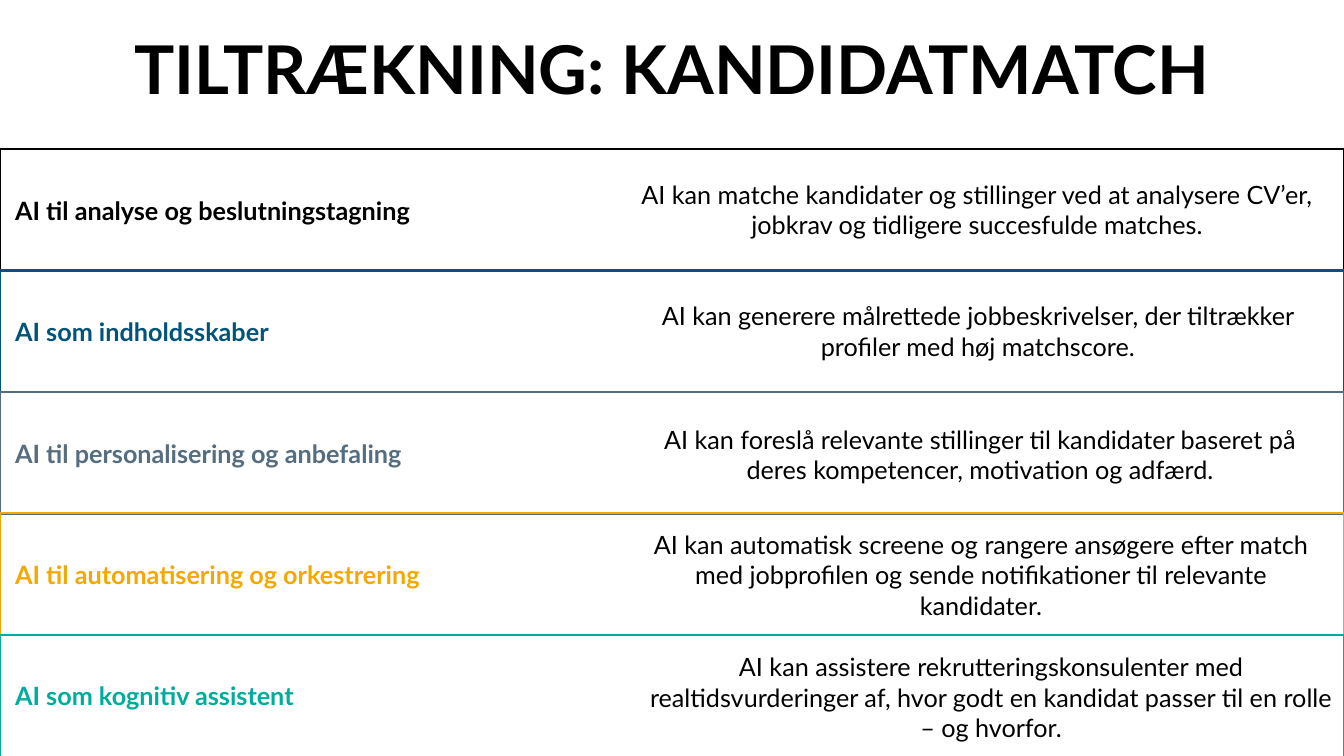
from pptx import Presentation
from pptx.dml.color import RGBColor
from pptx.enum.shapes import MSO_SHAPE as Shape
from pptx.enum.text import MSO_ANCHOR as Anchor, PP_ALIGN as Align
from pptx.util import Inches, Pt

FONT = "Lato"
COLORS = {
    "black": "000000",
    "blue": "00547A",
    "slate": "556D7E",
    "amber": "F6A800",
    "teal": "00AC9C",
}
WIDTH, HEIGHT = 13.33, 7.5
TITLE_HEIGHT = 1.34
ROWS_TOP = 1.48
ROW_PITCH = (HEIGHT - ROWS_TOP) / 5
ROW_HEIGHT = 1.21
DETAIL_WIDTH, DETAIL_HEIGHT = 7, 1.2

# Colour, label, detail, and the detail's left and top within its row
ROWS = [
    ("black", "AI til analyse og beslutningstagning",
     "AI kan matche kandidater og stillinger ved at analysere CV’er, "
     "jobkrav og tidligere succesfulde matches.", 6.19, 0),
    ("blue", "AI som indholdsskaber",
     "AI kan generere målrettede jobbeskrivelser, der tiltrækker "
     "profiler med høj matchscore.", 6.2, 0),
    ("slate", "AI til personalisering og anbefaling",
     "AI kan foreslå relevante stillinger til kandidater baseret på "
     "deres kompetencer, motivation og adfærd.", 6.22, 0.02),
    ("amber", "AI til automatisering og orkestrering",
     "AI kan automatisk screene og rangere ansøgere efter match med "
     "jobprofilen og sende notifikationer til relevante kandidater.", 6.23, 0.01),
    ("teal", "AI som kognitiv assistent",
     "AI kan assistere rekrutteringskonsulenter med realtidsvurderinger af, "
     "hvor godt en kandidat passer til en rolle – og hvorfor.", 6.33, 0.02),
]


def write(shape, text, size, color="black", bold=False, align=Align.CENTER):
    frame = shape.text_frame
    frame.word_wrap = True
    frame.vertical_anchor = Anchor.MIDDLE
    para = frame.paragraphs[0]
    para.alignment = align
    span = para.add_run()
    span.text = text
    span.font.name = FONT
    span.font.size = Pt(size)
    span.font.bold = bold
    span.font.color.rgb = RGBColor.from_string(COLORS[color])


def add_title(page, left, top, width, height):
    box = page.shapes.add_textbox(*map(Inches, (left, top, width, height)))
    write(box, "TILTRÆKNING: KANDIDATMATCH", 48, bold=True)


def add_band(page, left, top, width, height, color, label):
    """Outlined row with its coloured label at the left."""
    band = page.shapes.add_shape(
        Shape.RECTANGLE, *map(Inches, (left, top, width, height)))
    band.shadow.inherit = False
    band.fill.background()
    band.line.color.rgb = RGBColor.from_string(COLORS[color])
    band.line.width = Pt(1.5)
    write(band, " " + label, 18, color, bold=True, align=Align.LEFT)


def add_detail(page, left, top, width, height, text):
    box = page.shapes.add_textbox(*map(Inches, (left, top, width, height)))
    write(box, text, 18)


def add_rows(page, left, top, width):
    for index, (color, label, *_) in enumerate(ROWS):
        add_band(page, left, top + index * ROW_PITCH, width, ROW_HEIGHT, color, label)
    for index, (_, _, detail, shift, drop) in enumerate(ROWS):
        add_detail(page, left + shift, top + index * ROW_PITCH + drop,
                   DETAIL_WIDTH, DETAIL_HEIGHT, detail)


def main():
    deck = Presentation()
    deck.slide_width, deck.slide_height = Inches(WIDTH), Inches(HEIGHT)
    page = deck.slides.add_slide(deck.slide_layouts[6])
    add_title(page, 0, 0, WIDTH, TITLE_HEIGHT)
    add_rows(page, 0, ROWS_TOP, WIDTH)
    deck.save("out.pptx")


if __name__ == "__main__":
    main()
